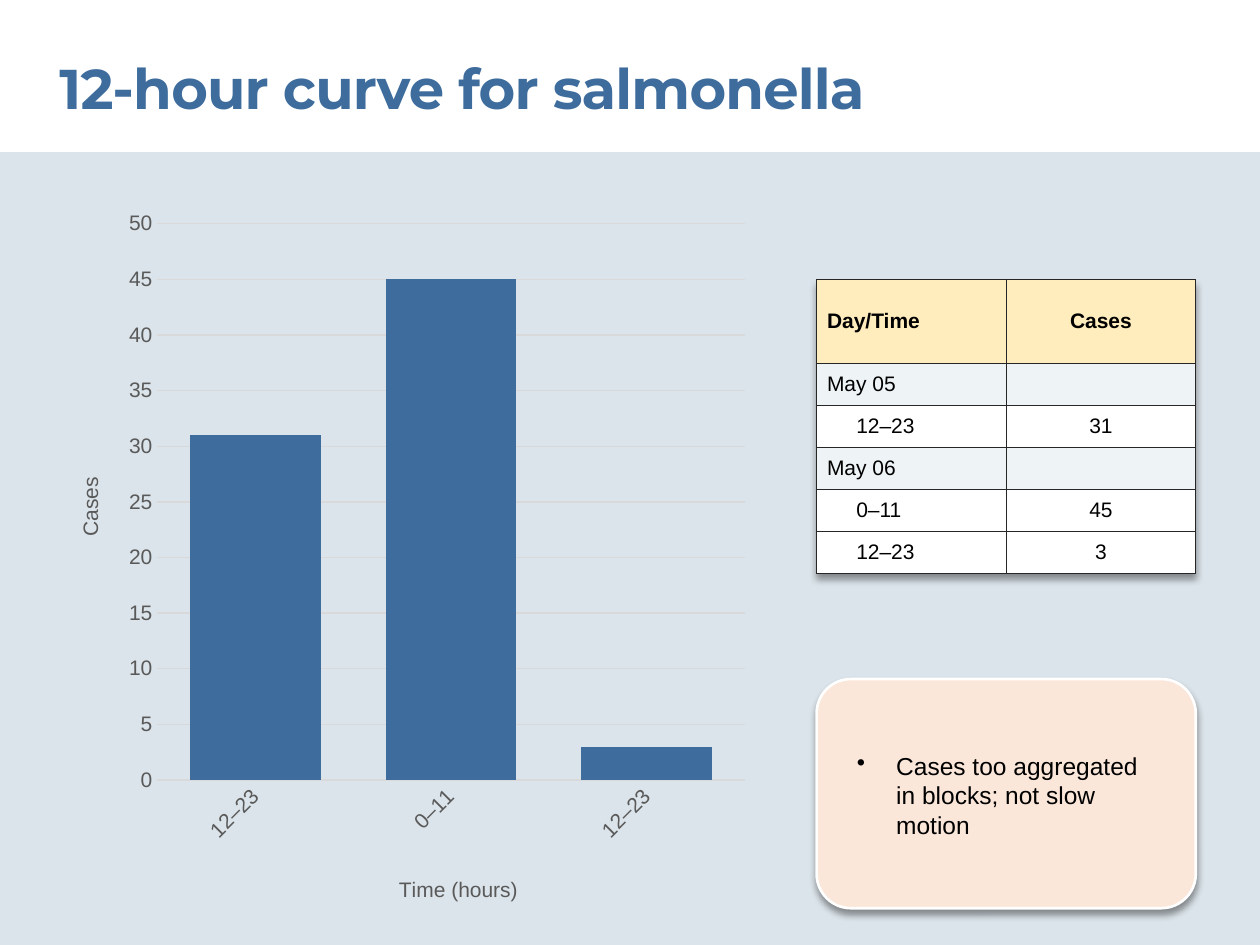
from dataclasses import dataclass
from typing import Any

from lxml import etree
from pptx import Presentation
from pptx.chart.data import CategoryChartData
from pptx.dml.color import RGBColor
from pptx.enum.chart import XL_CHART_TYPE, XL_TICK_MARK
from pptx.enum.shapes import MSO_SHAPE
from pptx.enum.text import MSO_ANCHOR, PP_ALIGN
from pptx.oxml.ns import qn
from pptx.util import Pt

COLUMN = XL_CHART_TYPE.COLUMN_CLUSTERED
NO_TICK = XL_TICK_MARK.NONE
RECT, ROUND = MSO_SHAPE.RECTANGLE, MSO_SHAPE.ROUNDED_RECTANGLE
LEFT, CENTER = PP_ALIGN.LEFT, PP_ALIGN.CENTER
MIDDLE = MSO_ANCHOR.MIDDLE

BLUE = RGBColor(0x3D, 0x6C, 0x9D)
PALE = RGBColor(0xDB, 0xE4, 0xEA)
PEACH = RGBColor(0xFB, 0xE7, 0xDA)
CREAM = RGBColor(0xFF, 0xED, 0xBD)
MIST = RGBColor(0xEE, 0xF3, 0xF6)
WHITE = RGBColor(0xFF, 0xFF, 0xFF)
BLACK = RGBColor(0, 0, 0)
INK = RGBColor(0x26, 0x26, 0x26)
GRAY = RGBColor(0x59, 0x59, 0x59)
GRID = RGBColor(0xD9, 0xD9, 0xD9)


@dataclass
class Box:
    left: float
    top: float
    width: float
    height: float

    def pts(self) -> tuple:
        return Pt(self.left), Pt(self.top), Pt(self.width), Pt(self.height)


@dataclass
class Row:
    label: str
    count: str
    fill: RGBColor
    height: float = 24
    indent: float = 0
    bold: bool = False


ROWS = [
    Row("Day/Time", "Cases", CREAM, height=48, bold=True),
    Row("May 05", "", MIST),
    Row("12–23", "31", WHITE, indent=16.7),
    Row("May 06", "", MIST),
    Row("0–11", "45", WHITE, indent=16.7),
    Row("12–23", "3", WHITE, indent=16.7),
]


def add(node: Any, tag: str, **attrs: object) -> Any:
    return etree.SubElement(node, qn(tag), {k: str(v) for k, v in attrs.items()})


def style(font: Any, size: float, color: RGBColor, bold: bool = False, name: str = "Arial") -> None:
    font.name, font.size, font.bold = name, Pt(size), bold
    font.color.rgb = color


def shade(node: Any) -> None:
    for old in node.findall(qn("a:effectLst")):
        node.remove(old)
    glow = add(add(node, "a:effectLst"), "a:outerShdw", blurRad=Pt(4), dist=Pt(3),
               dir=5400000, algn="t", rotWithShape=0)
    add(add(glow, "a:srgbClr", val=BLACK), "a:alpha", val=40000)


def add_block(slide: Any, kind: Any, box: Box, fill: RGBColor) -> Any:
    shape = slide.shapes.add_shape(kind, *box.pts())
    shape.shadow.inherit = False
    shape.fill.solid()
    shape.fill.fore_color.rgb = fill
    shape.line.fill.background()
    return shape


def add_text(slide: Any, box: Box, text: str) -> Any:
    frame = slide.shapes.add_textbox(*box.pts()).text_frame
    frame.word_wrap = True
    frame.margin_left = frame.margin_right = frame.margin_top = frame.margin_bottom = 0
    para = frame.paragraphs[0]
    para.text = text
    return para


def fill_cell(cell: Any, text: str, row: Row, align: Any, indent: float) -> None:
    cell.fill.solid()
    cell.fill.fore_color.rgb = row.fill
    cell.vertical_anchor = MIDDLE
    cell.margin_left = cell.margin_right = Pt(6)
    para = cell.text_frame.paragraphs[0]
    para.alignment = align
    style(para.font, 12, BLACK, row.bold)
    if text:
        para.text = text
        para._p.get_or_add_pPr().set("marL", str(Pt(indent)))
    else:
        add(para._p, "a:endParaRPr", sz=1200)
    props = cell._tc.get_or_add_tcPr()
    for spot, side in enumerate(("a:lnL", "a:lnR", "a:lnT", "a:lnB")):
        line = add(props, side, w=Pt(0.5))
        add(add(line, "a:solidFill"), "a:srgbClr", val=INK)
        props.insert(spot, line)


def add_cases(slide: Any, box: Box) -> None:
    table = slide.shapes.add_table(len(ROWS), 2, *box.pts()).table
    table.horz_banding = False
    shade_props = table._tbl.tblPr
    shade(shade_props)
    shade_props.insert(0, shade_props.find(qn("a:effectLst")))
    for col in table.columns:
        col.width = Pt(box.width / 2)
    for spot, row in enumerate(ROWS):
        table.rows[spot].height = Pt(row.height)
        fill_cell(table.cell(spot, 0), row.label, row, LEFT, row.indent)
        fill_cell(table.cell(spot, 1), row.count, row, CENTER, 0)


def place(node: Any, spot: int, **share: float) -> None:
    for old in node.findall(qn("c:layout")):
        node.remove(old)
    layout = add(node, "c:layout")
    node.insert(spot, layout)
    manual = add(layout, "c:manualLayout")
    if "w" in share:
        add(manual, "c:layoutTarget", val="inner")
    for key in ("x", "y"):
        add(manual, f"c:{key}Mode", val="edge")
    for key, value in share.items():
        add(manual, f"c:{key}", val=value)


def set_axis(axis: Any, title: str, x: float, y: float) -> None:
    axis.major_tick_mark = axis.minor_tick_mark = NO_TICK
    style(axis.tick_labels.font, 12, GRAY)
    para = axis.axis_title.text_frame.paragraphs[0]
    para.text = title
    style(para.font, 12, GRAY)
    style(para.runs[0].font, 12, GRAY)
    place(axis.axis_title._element, 1, x=x, y=y)


def add_curve(slide: Any, box: Box) -> None:
    times = [row for row in ROWS if row.indent]
    data = CategoryChartData()
    data.categories = [row.label for row in times]
    data.add_series("Series 1", [int(row.count) for row in times])
    chart = slide.shapes.add_chart(COLUMN, *box.pts(), data).chart
    chart.has_legend = chart.has_title = False
    style(chart.font, 10, BLACK)
    plot = chart.plots[0]
    plot.gap_width = 50
    plot.vary_by_categories = False
    bars = plot.series[0].format.fill
    bars.solid()
    bars.fore_color.rgb = BLUE
    cats, vals = chart.category_axis, chart.value_axis
    set_axis(cats, "Time (hours)", 0.48, 0.95)
    set_axis(vals, "Cases", 0.02, 0.39)
    cats._element.find(qn("c:txPr")).find(qn("a:bodyPr")).set("rot", "-2700000")
    vals.minimum_scale, vals.maximum_scale, vals.major_unit = 0, 50, 5
    vals.format.line.fill.background()
    for line in (cats.format.line, vals.major_gridlines.format.line):
        line.color.rgb = GRID
        line.width = Pt(0.75)
    place(chart._chartSpace.chart.plotArea, 0, x=0.14, y=0.04, w=0.84, h=0.78)


def main() -> None:
    deck = Presentation()
    deck.slide_width, deck.slide_height = Pt(720), Pt(540)
    slide = deck.slides.add_slide(deck.slide_layouts[6])
    add_block(slide, RECT, Box(0, 87, 720, 453), PALE)
    card = add_block(slide, ROUND, Box(466.6, 388, 216.7, 131), PEACH)
    card.adjustments[0] = 0.15
    card.line.color.rgb = WHITE
    card.line.width = Pt(1.5)
    shade(card._element.spPr)
    title = add_text(slide, Box(34, 30.5, 649, 39), "12-hour curve for salmonella")
    style(title.font, 32, BLUE, True, "Montserrat")
    title.runs[0].font._element.set("spc", "-50")
    note = add_text(slide, Box(489.6, 429, 165.6, 51),
                    "Cases too aggregated in blocks; not slow motion")
    style(note.font, 14, BLACK)
    props = note._p.get_or_add_pPr()
    props.set("marL", str(Pt(22.5)))
    props.set("indent", str(Pt(-22.5)))
    props.insert(0, add(props, "a:buChar", char="•"))
    add_cases(slide, Box(466.6, 159.8, 216.7, 168))
    add_curve(slide, Box(34, 111.6, 399.6, 407.5))
    deck.save("out.pptx")


if __name__ == "__main__":
    main()
